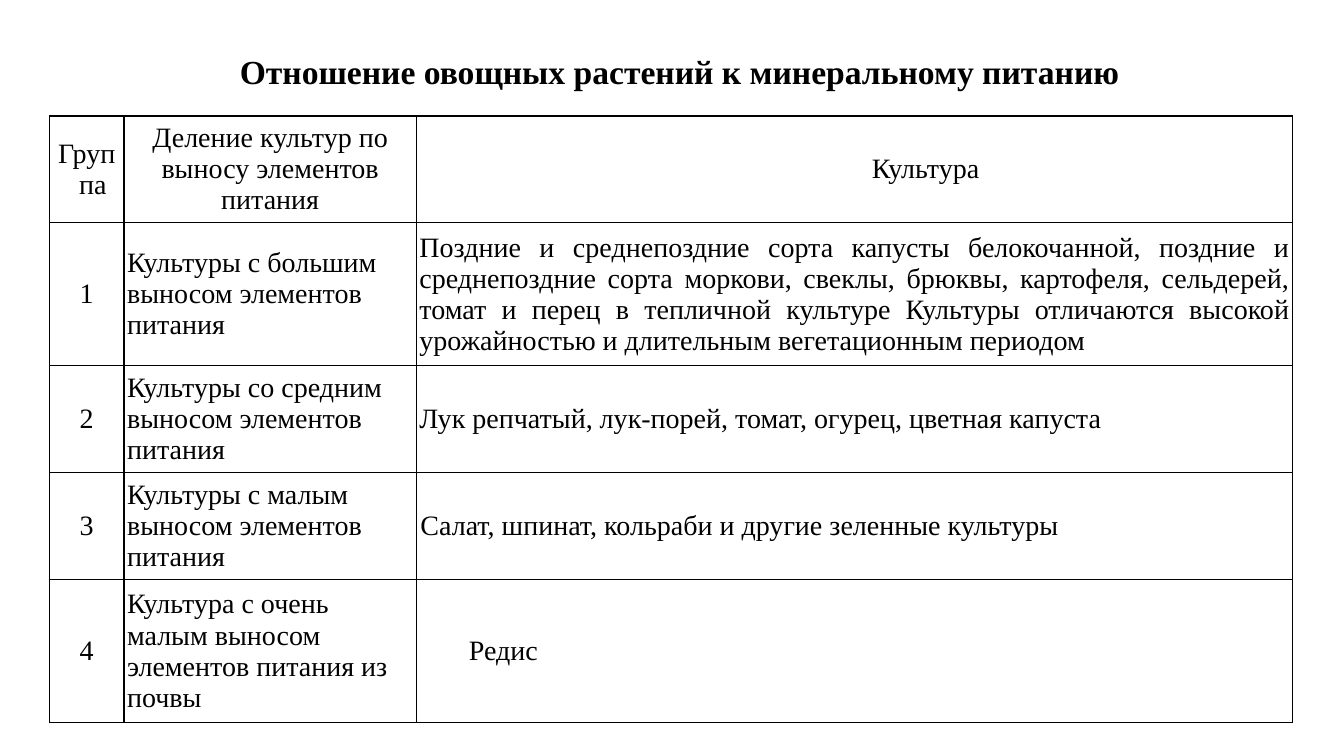
import pptx
import pptx.dml.color
import pptx.enum.text
import pptx.oxml
import pptx.oxml.ns
import pptx.util

FONT = "Times New Roman"
COLORS = {"text": "000000", "border": "000000", "page": "FFFFFF"}
SLIDE_W, SLIDE_H = 13.33, 7.5
TABLE_LEFT, TABLE_TOP = 0.49, 1.15
COLUMNS = (0.74, 2.9, 8.69)
LINE_ROOM = {3: 1.06, 4: 1.42}
ROW_LINES = (3, 4, 3, 3, 4)

ALIGN = pptx.enum.text.PP_ALIGN
MIDDLE = pptx.enum.text.MSO_ANCHOR.MIDDLE

HEADER = (
    ("Группа", {"margin": 0.12, "indent": -0.12}),
    ("Деление культур по выносу элементов питания", {}),
    ("Культура", {"margin": 0.92, "indent": 0.49}),
)
GROUPS = (
    ("Культуры с большим выносом элементов питания",
     "Поздние и среднепоздние сорта капусты белокочанной, поздние и "
     "среднепоздние сорта моркови, свеклы, брюквы, картофеля, сельдерей, "
     "томат и перец в тепличной культуре Культуры отличаются высокой "
     "урожайностью и длительным вегетационным периодом",
     {"align": ALIGN.JUSTIFY}),
    ("Культуры со средним выносом элементов питания",
     "Лук репчатый, лук-порей, томат, огурец, цветная капуста",
     {"align": ALIGN.JUSTIFY, "margin": 0.01, "indent": -0.01}),
    ("Культуры с малым выносом элементов питания",
     "Салат, шпинат, кольраби и другие зеленные культуры",
     {"align": ALIGN.LEFT, "indent": 0.01}),
    ("Культура с очень малым выносом элементов питания из почвы",
     "Редис",
     {"align": ALIGN.JUSTIFY, "indent": 0.49}),
)


def inches(value):
    return pptx.util.Inches(value)


def rgb(name):
    return pptx.dml.color.RGBColor.from_string(COLORS[name])


def write_text(tf, text, size=20, bold=False, align=ALIGN.CENTER,
               margin=0, indent=0, spacing=None):
    tf.word_wrap = True
    p = tf.paragraphs[0]
    p.alignment = align
    if spacing:
        p.line_spacing = spacing
    pPr = p._p.get_or_add_pPr()
    pPr.set("marL", str(inches(margin)))
    pPr.set("indent", str(inches(indent)))
    r = p.add_run()
    r.text = text
    r.font.name = FONT
    r.font.size = pptx.util.Pt(size)
    r.font.bold = bold
    r.font.color.rgb = rgb("text")


def add_borders(cell, width=1):
    tcPr = cell._tc.get_or_add_tcPr()
    for i, side in enumerate(("lnL", "lnR", "lnT", "lnB")):
        tcPr.insert(i, pptx.oxml.parse_xml(
            f'<a:{side} {pptx.oxml.ns.nsdecls("a")} w="{pptx.util.Pt(width)}">'
            f'<a:solidFill><a:srgbClr val="{COLORS["border"]}"/></a:solidFill>'
            f'</a:{side}>'))


def fill_cell(cell, text, **fmt):
    cell.margin_left = cell.margin_right = inches(0.03)
    cell.margin_top = cell.margin_bottom = 0
    cell.vertical_anchor = MIDDLE
    cell.fill.background()
    write_text(cell.text_frame, text, **fmt)
    add_borders(cell)


def set_title(s, text):
    title = s.shapes.title
    title.left, title.top = inches(0.15), inches(0.4)
    title.width, title.height = inches(SLIDE_W - 0.15), inches(0.66)
    title.text_frame.vertical_anchor = MIDDLE
    write_text(title.text_frame, text, size=24, bold=True, spacing=0.9)


def add_crop_table(s):
    heights = [LINE_ROOM[n] for n in ROW_LINES]
    table = s.shapes.add_table(
        len(heights), len(COLUMNS), inches(TABLE_LEFT), inches(TABLE_TOP),
        inches(sum(COLUMNS)), inches(sum(heights))).table
    table.first_row = table.horz_banding = False
    for column, width in zip(table.columns, COLUMNS):
        column.width = inches(width)
    for row, height in zip(table.rows, heights):
        row.height = inches(height)

    rows = [HEADER]
    for number, (group, crops, fmt) in enumerate(GROUPS, 1):
        rows.append(((str(number), {}), (group, {"align": ALIGN.LEFT}), (crops, fmt)))
    for row, contents in zip(table.rows, rows):
        for cell, (text, fmt) in zip(row.cells, contents):
            fill_cell(cell, text, **fmt)


def main():
    prs = pptx.Presentation()
    prs.slide_width, prs.slide_height = inches(SLIDE_W), inches(SLIDE_H)
    s = prs.slides.add_slide(prs.slide_layouts[5])
    s.background.fill.solid()
    s.background.fill.fore_color.rgb = rgb("page")
    set_title(s, "Отношение овощных растений к минеральному питанию")
    add_crop_table(s)
    prs.save("out.pptx")


if __name__ == "__main__":
    main()
